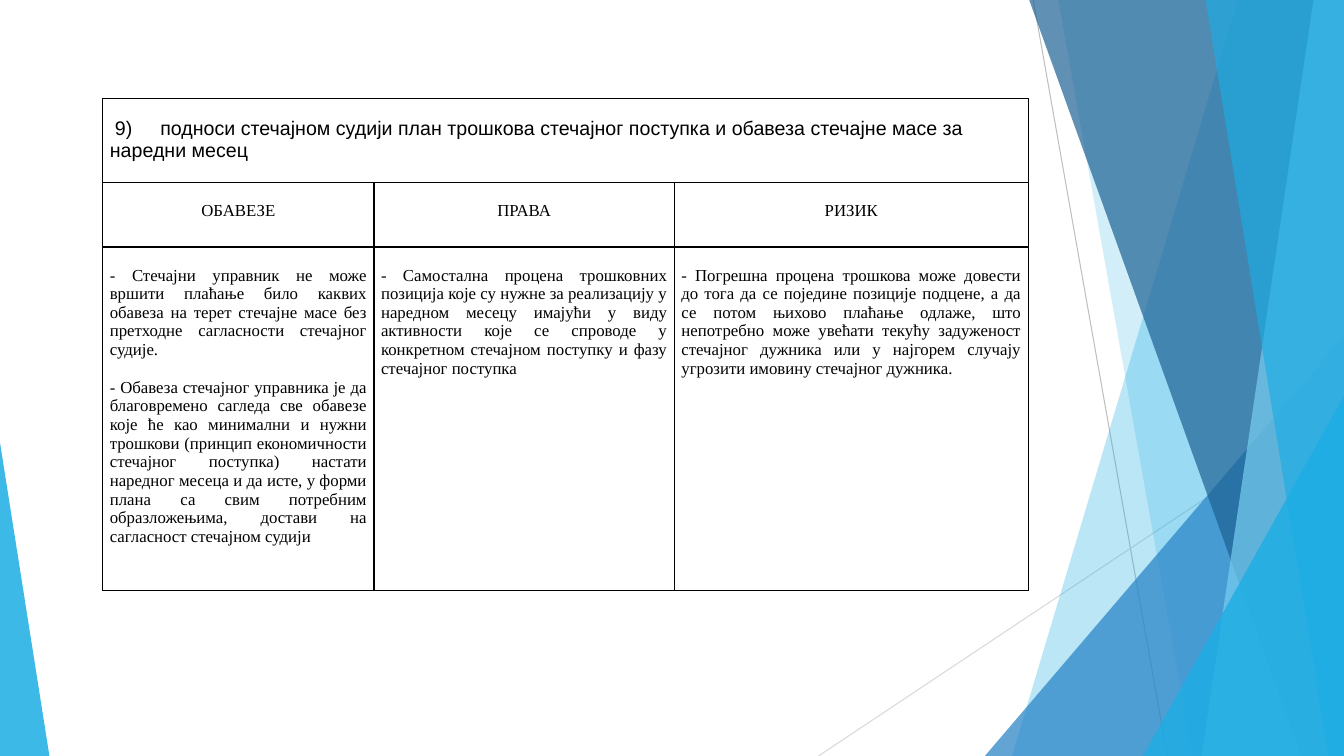
"""Builds the slide on the bankruptcy trustee's monthly cost plan."""
from lxml import etree
from pptx import Presentation
from pptx.dml.color import RGBColor
from pptx.enum.shapes import MSO_CONNECTOR, MSO_SHAPE
from pptx.enum.text import PP_ALIGN
from pptx.oxml.ns import qn
from pptx.util import Inches, Pt

STRAIGHT = MSO_CONNECTOR.STRAIGHT
TRIANGLE = MSO_SHAPE.ISOSCELES_TRIANGLE
LEFT, CENTER, JUSTIFY = PP_ALIGN.LEFT, PP_ALIGN.CENTER, PP_ALIGN.JUSTIFY

WIDTH, HEIGHT = Inches(13.33), Inches(7.5)
BLACK = RGBColor(0x00, 0x00, 0x00)
GRAY = RGBColor(0xBF, 0xBF, 0xBF)
PALE_GRAY = RGBColor(0xD9, 0xD9, 0xD9)
SKY = RGBColor(0x1C, 0xAD, 0xE4)
PALE_SKY = RGBColor(0x77, 0xCE, 0xEF)
BLUE = RGBColor(0x26, 0x83, 0xC6)
NAVY = RGBColor(0x1D, 0x62, 0x94)

TITLE_FONT = {"name": "Arial", "size": Pt(14)}
BODY_FONT = {"name": "Times New Roman", "size": Pt(12)}
CELL_MARGINS = {"margin_left": Inches(0.07), "margin_right": Inches(0.07),
                "margin_top": Inches(0.19), "margin_bottom": 0}
COLUMN_SHARES = (20.18, 22.35, 26.33)
ROW_SHARES = (11.07, 8.53, 45.47)

TITLE = ("9)\tподноси стечајном судији план трошкова стечајног поступка "
         "и обавеза стечајне масе за наредни месец")
HEADINGS = ("ОБАВЕЗЕ", "ПРАВА", "РИЗИК")
DETAILS = (
    ("- Стечајни управник не може вршити плаћање било каквих обавеза на терет "
     "стечајне масе без претходне сагласности стечајног судије.",
     "- Обавеза стечајног управника је да благовремено сагледа све обавезе које "
     "ће као минимални и нужни трошкови (принцип економичности стечајног "
     "поступка) настати наредног месеца и да исте, у форми плана са свим "
     "потребним образложењима, достави на сагласност стечајном судији"),
    ("- Самостална процена трошковних позиција које су нужне за реализацију у "
     "наредном месецу имајући у виду активности које се спроводе у конкретном "
     "стечајном поступку и фазу стечајног поступка",),
    ("- Погрешна процена трошкова може довести до тога да се поједине позиције "
     "подцене, а да се потом њихово плаћање одлаже, што непотребно може увећати "
     "текућу задуженост стечајног дужника или у најгорем случају угрозити "
     "имовину стечајног дужника.",),
)


def across(percent):
    return round(WIDTH * percent / 100)


def down(percent):
    return round(HEIGHT * percent / 100)


def apply_format(target, values):
    for attribute, value in values.items():
        setattr(target, attribute, value)


def paint(shape, color, opacity):
    shape.shadow.inherit = False
    shape.line.fill.background()
    shape.fill.solid()
    shape.fill.fore_color.rgb = color
    tint = shape.fill._xPr.find(qn("a:solidFill"))[0]
    etree.SubElement(tint, qn("a:alpha"), val=str(opacity * 1000))


def add_ray(slide, start, end, color):
    ray = slide.shapes.add_connector(STRAIGHT, across(start[0]), down(start[1]),
                                     across(end[0]), down(end[1]))
    ray.line.color.rgb = color
    ray.line.width = Pt(0.75)
    etree.SubElement(ray._element.spPr, qn("a:effectLst"))


def add_band(slide, top_left, bottom_left, color, opacity):
    outline = slide.shapes.build_freeform(across(top_left), 0)
    outline.add_line_segments([(WIDTH, 0), (WIDTH, HEIGHT),
                               (across(bottom_left), HEIGHT)])
    paint(outline.convert_to_shape(), color, opacity)


def add_corner(slide, left, right, top, apex, color, opacity):
    corner = slide.shapes.add_shape(TRIANGLE, across(left), down(top),
                                    across(right - left), down(100 - top))
    corner.adjustments[0] = apex
    paint(corner, color, opacity)


def add_borders(cell):
    properties = cell._tc.get_or_add_tcPr()
    for side in ("lnL", "lnR", "lnT", "lnB"):
        border = etree.SubElement(properties, qn(f"a:{side}"), w=str(Pt(1)))
        solid = etree.SubElement(border, qn("a:solidFill"))
        etree.SubElement(solid, qn("a:srgbClr"), val=str(BLACK))


def fill_cell(cell, paragraphs, font, alignment):
    apply_format(cell, CELL_MARGINS)
    for index, text in enumerate(paragraphs):
        frame = cell.text_frame
        paragraph = frame.add_paragraph() if index else frame.paragraphs[0]
        paragraph.alignment = alignment
        if index:
            paragraph.space_before = Pt(13.5)
        run = paragraph.add_run()
        run.text = text
        apply_format(run.font, font)
        run.font.color.rgb = BLACK


def set_number_gap(paragraph):
    properties = paragraph._p.get_or_add_pPr()
    properties.set("marL", "0")
    properties.set("indent", str(Inches(0.05)))
    stops = etree.SubElement(properties, qn("a:tabLst"))
    etree.SubElement(stops, qn("a:tab"), pos=str(Inches(0.45)), algn="l")


def add_duties_table(slide):
    table = slide.shapes.add_table(
        len(ROW_SHARES), len(COLUMN_SHARES), across(7.65), down(13.07),
        across(sum(COLUMN_SHARES)), down(sum(ROW_SHARES))).table
    apply_format(table, {"first_row": False, "horz_banding": False})
    for column, share in zip(table.columns, COLUMN_SHARES):
        column.width = across(share)
    for row, share in zip(table.rows, ROW_SHARES):
        row.height = down(share)
    for cell in table.iter_cells():
        add_borders(cell)
        cell.fill.background()
    title = table.cell(0, 0)
    title.merge(table.cell(0, len(COLUMN_SHARES) - 1))
    fill_cell(title, [TITLE], TITLE_FONT, LEFT)
    set_number_gap(title.text_frame.paragraphs[0])
    for index, (heading, details) in enumerate(zip(HEADINGS, DETAILS)):
        fill_cell(table.cell(1, index), [heading], BODY_FONT, CENTER)
        fill_cell(table.cell(2, index), details, BODY_FONT, JUSTIFY)


def main():
    deck = Presentation()
    apply_format(deck, {"slide_width": WIDTH, "slide_height": HEIGHT})
    slide = deck.slides.add_slide(deck.slide_layouts[6])
    add_ray(slide, (76.88, 0), (86.85, 100), GRAY)
    add_ray(slide, (100, 53.73), (60.9, 100), PALE_GRAY)
    add_band(slide, 92.1, 75.3, SKY, 30)
    add_band(slide, 78.75, 88.73, SKY, 20)
    add_corner(slide, 73.28, 100, 44.4, 1, BLUE, 72)
    add_band(slide, 76.58, 96.83, NAVY, 70)
    add_band(slide, 97.73, 89.4, PALE_SKY, 70)
    add_band(slide, 89.7, 98.85, SKY, 65)
    add_corner(slide, 85.05, 100, 52.4, 1, SKY, 80)
    add_corner(slide, 0, 3.68, 58.53, 0, SKY, 85)
    add_duties_table(slide)
    deck.save("out.pptx")


if __name__ == "__main__":
    main()
